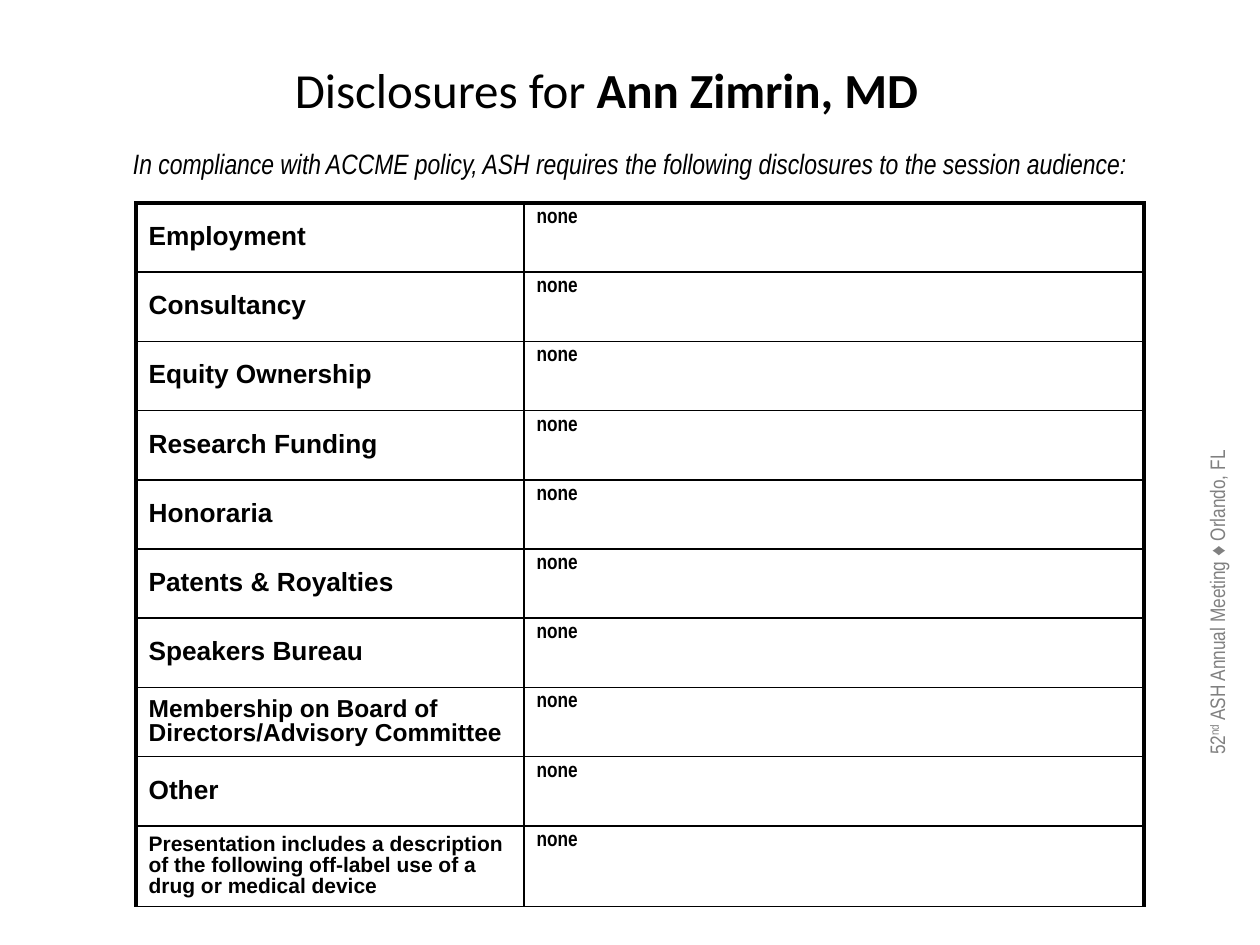
from dataclasses import dataclass

from lxml.etree import SubElement
from pptx import Presentation
from pptx.dml.color import RGBColor
from pptx.enum.text import MSO_ANCHOR, MSO_AUTO_SIZE, PP_ALIGN
from pptx.oxml.ns import qn
from pptx.util import Pt


@dataclass(frozen=True)
class Theme:
    ink: str = "000000"
    muted: str = "808080"
    title_font: str = "Calibri"
    label_font: str = "Arial"
    narrow_font: str = "Arial Narrow"
    title_size: int = 28
    subtitle_size: int = 16
    label_size: int = 15
    long_label_size: int = 14
    small_size: int = 12
    thick: float = 2.25
    thin: float = 1


THEME = Theme()
EMU_PER_INCH = 914400
PX_PER_INCH = 126
ANSWER = "none"
DISCLOSURES = [
    ("Employment", THEME.label_size),
    ("Consultancy", THEME.label_size),
    ("Equity Ownership", THEME.label_size),
    ("Research Funding", THEME.label_size),
    ("Honoraria", THEME.label_size),
    ("Patents & Royalties", THEME.label_size),
    ("Speakers Bureau", THEME.label_size),
    ("Membership on Board of Directors/Advisory Committee", THEME.long_label_size),
    ("Other", THEME.label_size),
    ("Presentation includes a description of the following off-label use of a drug or medical device",
     THEME.small_size),
]


def px(length):
    return round(length * EMU_PER_INCH / PX_PER_INCH)


def apply_format(target, values):
    for name, value in values.items():
        setattr(target, name, value)


def add_span(para, text, color=THEME.ink, baseline=None, **font):
    span = para.add_run()
    span.text = text
    apply_format(span.font, font)
    span.font.color.rgb = RGBColor.from_string(color)
    if baseline:
        span._r.get_or_add_rPr().set("baseline", str(baseline))
    return span


def add_text(page, bounds, spans, style, frame_format, alignment=PP_ALIGN.LEFT, rotation=0):
    box = page.shapes.add_textbox(*map(px, bounds))
    box.rotation = rotation
    apply_format(box.text_frame, {"word_wrap": True, **frame_format})
    para = box.text_frame.paragraphs[0]
    para.alignment = alignment
    for text, changes in spans:
        add_span(para, text, **{**style, **changes})
    return box


def set_borders(cell, widths):
    properties = cell._tc.get_or_add_tcPr()
    for side, width in zip("LRTB", widths):
        line = SubElement(properties, qn(f"a:ln{side}"), w=str(Pt(width)))
        fill = SubElement(line, qn("a:solidFill"))
        SubElement(fill, qn("a:srgbClr"), val=THEME.ink)


def fill_cell(cell, text, anchor, widths, **font):
    cell.vertical_anchor = anchor
    para = cell.text_frame.paragraphs[0]
    para.line_spacing = 0.9
    add_span(para, text, bold=True, **font)
    set_borders(cell, widths)
    cell.fill.background()


def add_disclosure_table(page):
    column_widths = [388, 620]
    standard_rows, last_row = 623, 81
    count = len(DISCLOSURES)
    frame = page.shapes.add_table(count, len(column_widths), px(136), px(203),
                                  px(sum(column_widths)), px(standard_rows + last_row))
    table = frame.table
    apply_format(table, {"first_row": False, "horz_banding": False})
    for column, width in zip(table.columns, column_widths):
        column.width = px(width)
    for index, (label, size) in enumerate(DISCLOSURES):
        is_last = index == count - 1
        table.rows[index].height = px(last_row if is_last else standard_rows / (count - 1))
        top = THEME.thin if index else THEME.thick
        fill_cell(table.cell(index, 0), label, MSO_ANCHOR.MIDDLE,
                  (THEME.thick, THEME.thin, top, THEME.thin),
                  name=THEME.label_font, size=Pt(size))
        fill_cell(table.cell(index, 1), ANSWER, MSO_ANCHOR.TOP,
                  (THEME.thin, THEME.thick, top, THEME.thin),
                  name=THEME.narrow_font, size=Pt(THEME.small_size))


def main():
    deck = Presentation()
    apply_format(deck, {"slide_width": px(1260), "slide_height": px(945)})
    page = deck.slides.add_slide(deck.slide_layouts[6])
    add_text(page, (273, 21, 667, 136),
             [("Disclosures for ", {}), ("Ann Zimrin, MD", {"bold": True})],
             {"name": THEME.title_font, "size": Pt(THEME.title_size)},
             {"vertical_anchor": MSO_ANCHOR.MIDDLE}, PP_ALIGN.CENTER)
    add_disclosure_table(page)
    no_margins = {f"margin_{side}": 0 for side in ("left", "right", "top", "bottom")}
    grow = {"auto_size": MSO_AUTO_SIZE.SHAPE_TO_FIT_TEXT}
    add_text(page, (133, 147, 1064, 34),
             [("In compliance with ACCME policy, ASH requires the following disclosures "
               "to the session audience:", {})],
             {"name": THEME.narrow_font, "size": Pt(THEME.subtitle_size), "italic": True},
             {**no_margins, **grow})
    add_text(page, (949, 480, 536, 38),
             [("52", {}), ("nd", {"baseline": 30000}),
              (" ASH Annual Meeting ♦ Orlando, FL", {})],
             {"name": THEME.narrow_font, "size": Pt(THEME.small_size), "color": THEME.muted},
             grow, rotation=270)
    deck.save("out.pptx")


if __name__ == "__main__":
    main()
